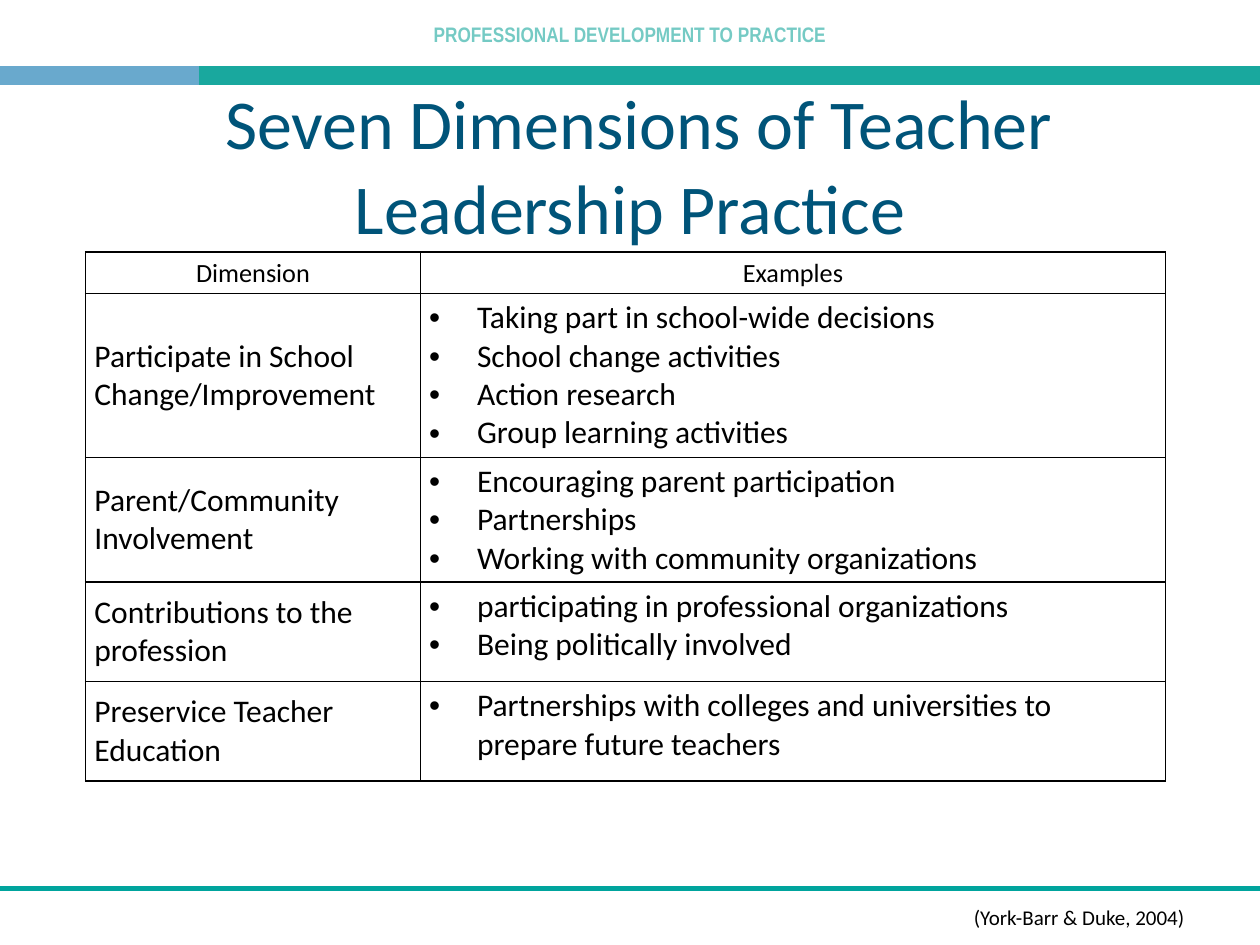
from collections import namedtuple

from lxml import etree
from pptx import Presentation
from pptx.dml.color import RGBColor
from pptx.enum.shapes import MSO_CONNECTOR, MSO_SHAPE
from pptx.enum.text import MSO_ANCHOR, MSO_AUTO_SIZE, PP_ALIGN
from pptx.oxml.ns import qn
from pptx.util import Inches, Pt

WIDTH, HEIGHT = 10, 7.5
BLACK, TEAL = "000000", "19A89E"
INSETS = (0.07, 0.04)
COLUMN_SHARES = (0.31, 0.69)
ROW_HEIGHTS = (0.33, 1.3, 0.99, 0.79, 0.79)
BULLET_INDENT = 0.38

DIMENSIONS = [
    ("Participate in School Change/Improvement",
     ["Taking part in school-wide decisions", "School change activities",
      "Action research", "Group learning activities"]),
    ("Parent/Community Involvement",
     ["Encouraging parent participation", "Partnerships",
      "Working with community organizations"]),
    ("Contributions to the profession",
     ["participating in professional organizations",
      "Being politically involved"]),
    ("Preservice Teacher Education",
     ["Partnerships with colleges and universities to prepare future teachers"]),
]

Box = namedtuple("Box", "left top width height")


def inches(box):
    return [Inches(length) for length in box]


def color(hex_string):
    return RGBColor.from_string(hex_string)


def add_run(paragraph, text, size, hex_string=BLACK, font="Calibri", bold=False):
    run = paragraph.add_run()
    run.text = text
    run.font.size, run.font.name, run.font.bold = Pt(size), font, bold
    run.font.color.rgb = color(hex_string)
    return run


def set_insets(target, horizontal, vertical):
    target.margin_left = target.margin_right = Inches(horizontal)
    target.margin_top = target.margin_bottom = Inches(vertical)


def add_label(slide, box, align, insets):
    """Add an empty wrapping text box; return its first paragraph."""
    frame = slide.shapes.add_textbox(*inches(box)).text_frame
    frame.word_wrap = True
    set_insets(frame, *insets)
    frame.paragraphs[0].alignment = align
    return frame.paragraphs[0]


def add_bar(slide, box, hex_string):
    bar = slide.shapes.add_shape(MSO_SHAPE.RECTANGLE, *inches(box))
    bar.shadow.inherit = False
    bar.fill.solid()
    bar.fill.fore_color.rgb = color(hex_string)
    bar.line.fill.background()


def add_header(slide, box):
    banner = add_label(slide, Box(box.left, box.top + box.height * 0.19,
                                  box.width, box.height * 0.6),
                       PP_ALIGN.CENTER, INSETS)
    run = add_run(banner, "PROFESSIONAL DEVELOPMENT TO PRACTICE", 12, TEAL,
                  "Arial Narrow", True)
    tint = run.font.color._xFill.find(qn("a:srgbClr"))
    etree.SubElement(tint, qn("a:alpha"), val="60000")

    bar_height = 0.15
    bar_top = box.top + box.height - bar_height
    accent_width = box.width * 0.158
    add_bar(slide, Box(box.left, bar_top, accent_width, bar_height), "69A9CD")
    add_bar(slide, Box(box.left + accent_width, bar_top,
                       box.width - accent_width, bar_height), TEAL)


def add_title(slide, box):
    title = slide.shapes.title
    title.left, title.top, title.width, title.height = inches(box)
    frame = title.text_frame
    frame.word_wrap, frame.auto_size = True, MSO_AUTO_SIZE.NONE
    frame.vertical_anchor = MSO_ANCHOR.MIDDLE
    paragraph = frame.paragraphs[0]
    paragraph.alignment = PP_ALIGN.CENTER
    add_run(paragraph, " ", 44, "005479")
    add_run(paragraph, "Seven Dimensions of Teacher Leadership Practice", 40, "005479")


def format_cell(cell, anchor):
    """Give the cell a black frame, no fill, narrow insets and an anchor."""
    properties = cell._tc.get_or_add_tcPr()
    for side in ("lnL", "lnR", "lnT", "lnB"):
        border = etree.SubElement(properties, qn(f"a:{side}"), w=str(Pt(1)))
        fill = etree.SubElement(border, qn("a:solidFill"))
        etree.SubElement(fill, qn("a:srgbClr"), val=BLACK)
    cell.fill.background()
    cell.vertical_anchor = anchor
    set_insets(cell, *INSETS)


def add_bullet(paragraph):
    properties = paragraph._p.get_or_add_pPr()
    properties.set("marL", str(Inches(BULLET_INDENT)))
    properties.set("indent", str(-Inches(BULLET_INDENT)))
    etree.SubElement(properties, qn("a:buFont"), typeface="Arial")
    etree.SubElement(properties, qn("a:buChar"), char="•")


def add_dimensions_table(slide, box):
    table = slide.shapes.add_table(len(ROW_HEIGHTS), len(COLUMN_SHARES),
                                   *inches(box)).table
    table.first_row = table.horz_banding = False
    for column, share in zip(table.columns, COLUMN_SHARES):
        column.width = Inches(box.width * share)
    for row, height in zip(table.rows, ROW_HEIGHTS):
        row.height = Inches(height)

    for cell, heading in zip(table.rows[0].cells, ("Dimension", "Examples")):
        format_cell(cell, MSO_ANCHOR.TOP)
        paragraph = cell.text_frame.paragraphs[0]
        paragraph.alignment = PP_ALIGN.CENTER
        add_run(paragraph, heading, 15)

    for row, (dimension, examples) in enumerate(DIMENSIONS, start=1):
        dimension_cell, examples_cell = table.rows[row].cells
        format_cell(dimension_cell, MSO_ANCHOR.MIDDLE)
        add_run(dimension_cell.text_frame.paragraphs[0], dimension, 18)
        format_cell(examples_cell, MSO_ANCHOR.TOP)
        frame = examples_cell.text_frame
        for index, example in enumerate(examples):
            paragraph = frame.add_paragraph() if index else frame.paragraphs[0]
            add_bullet(paragraph)
            add_run(paragraph, example, 18)


def add_footer(slide, box):
    rule = slide.shapes.add_connector(
        MSO_CONNECTOR.STRAIGHT, Inches(box.left), Inches(box.top),
        Inches(box.left + box.width), Inches(box.top))
    rule.line.color.rgb = color("00A49D")
    rule.line.width = Pt(3)
    etree.SubElement(rule._element.spPr, qn("a:effectLst"))

    citation = add_label(slide, Box(box.left + box.width * 0.53, box.top + 0.08,
                                    box.width * 0.42, 0.3),
                         PP_ALIGN.RIGHT, (0.1, 0.05))
    add_run(citation, "(York-Barr & Duke, 2004)", 12)


def main():
    presentation = Presentation()
    presentation.slide_width, presentation.slide_height = Inches(WIDTH), Inches(HEIGHT)
    slide = presentation.slides.add_slide(presentation.slide_layouts[5])
    add_header(slide, Box(0, 0, WIDTH, HEIGHT * 0.09))
    add_title(slide, Box(WIDTH * 0.05, HEIGHT * 0.09, WIDTH * 0.9, HEIGHT * 0.16))
    add_dimensions_table(slide, Box(WIDTH * 0.068, 2, WIDTH * 0.857, sum(ROW_HEIGHTS)))
    add_footer(slide, Box(0, HEIGHT * 0.94, WIDTH, HEIGHT * 0.06))
    presentation.save("out.pptx")


if __name__ == "__main__":
    main()
